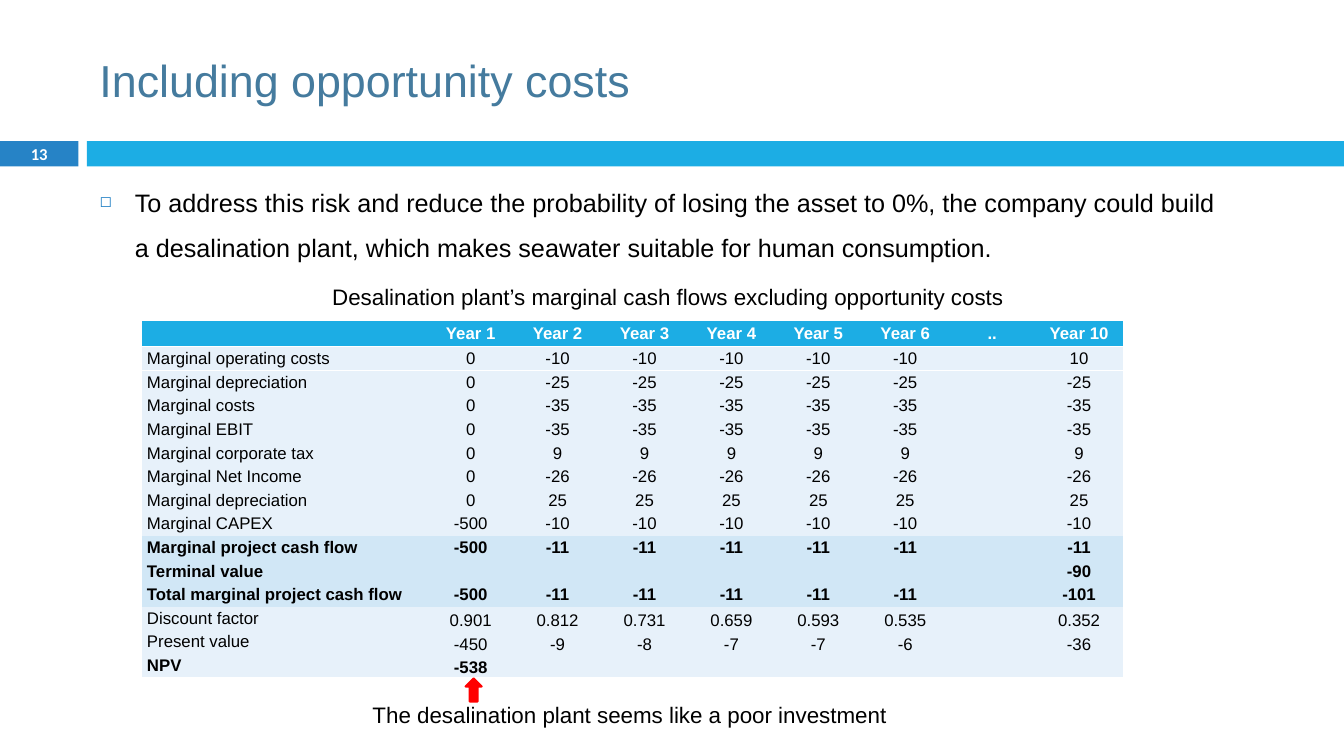
"""Build the slide on the desalination plant's marginal cash flows."""
import lxml.etree
import pptx
import pptx.dml.color
import pptx.enum.shapes
import pptx.enum.text
import pptx.oxml.ns
import pptx.util

Pt = pptx.util.Pt
Shape = pptx.enum.shapes.MSO_SHAPE
Align = pptx.enum.text.PP_ALIGN
Anchor = pptx.enum.text.MSO_ANCHOR
Fit = pptx.enum.text.MSO_AUTO_SIZE
qn = pptx.oxml.ns.qn

BLUE, DARK_BLUE, PALE, LIGHT = "1CADE4", "2683C6", "E7F1FA", "D1E7F6"
WHITE, BLACK, RED, STEEL = "FFFFFF", "000000", "FF0000", "457B9E"

TITLE = "Including opportunity costs"
PAGE_NUMBER = "13"
BODY = ("To address this risk and reduce the probability of losing the asset to 0%, "
        "the company could build a desalination plant, which makes seawater suitable "
        "for human consumption.")
CAPTION = "Desalination plant’s marginal cash flows excluding opportunity costs"
CONCLUSION = "The desalination plant seems like a poor investment"

HEADER = ["", "Year 1", "Year 2", "Year 3", "Year 4", "Year 5", "Year 6", "..", "Year 10"]
CASH_FLOWS = [
    ("Marginal operating costs", "0", ["-10"] * 5, "10"),
    ("Marginal depreciation", "0", ["-25"] * 5, "-25"),
    ("Marginal costs", "0", ["-35"] * 5, "-35"),
    ("Marginal EBIT", "0", ["-35"] * 5, "-35"),
    ("Marginal corporate tax", "0", ["9"] * 5, "9"),
    ("Marginal Net Income", "0", ["-26"] * 5, "-26"),
    ("Marginal depreciation", "0", ["25"] * 5, "25"),
    ("Marginal CAPEX", "-500", ["-10"] * 5, "-10"),
    ("Marginal project cash flow", "-500", ["-11"] * 5, "-11"),
    ("Terminal value", "", [""] * 5, "-90"),
    ("Total marginal project cash flow", "-500", ["-11"] * 5, "-101"),
    ("Discount factor", "0.901", ["0.812", "0.731", "0.659", "0.593", "0.535"], "0.352"),
    ("Present value", "-450", ["-9", "-8", "-7", "-7", "-6"], "-36"),
    ("NPV", "-538", [""] * 5, ""),
]
TOTAL_ROWS = range(9, 12)
DISCOUNT_ROWS = range(12, 15)
BOLD_ROWS = {0, 9, 10, 11, 14}

TABLE_LEFT, TABLE_TOP = 101.4, 229.1
LABEL_WIDTH, YEAR_WIDTH = 203.8, 62.1
HEADER_HEIGHT, ROW_HEIGHT = 18.7, 16.87
NO_STYLE = "{2D5ABB26-0587-4C30-8999-92F81FD0307C}"


def color(value):
    return pptx.dml.color.RGBColor.from_string(value)


def assign(target, values):
    for name, value in values.items():
        setattr(target, name, value)


def write(frame, text, size, fill, bold=False, font="Arial", **layout):
    para = frame.paragraphs[0]
    assign(para, layout)
    span = para.add_run()
    span.text = text
    assign(span.font, {"size": Pt(size), "name": font, "bold": bold})
    span.font.color.rgb = color(fill)
    return para


def add_text(page, place, text, size, fill, frame_format, **options):
    box = page.shapes.add_textbox(*map(Pt, place))
    assign(box.text_frame, {"word_wrap": True, **frame_format})
    return write(box.text_frame, text, size, fill, **options)


def add_block(page, kind, place, fill, line_width=None):
    block = page.shapes.add_shape(kind, *map(Pt, place))
    block.shadow.inherit = False
    block.fill.solid()
    block.fill.fore_color.rgb = color(fill)
    if line_width is None:
        block.line.fill.background()
    else:
        block.line.width = Pt(line_width)
        block.line.color.rgb = color(fill)


def add_bullet(para):
    settings = para._p.get_or_add_pPr()
    assign_indent = {"marL": Pt(25.2), "indent": -Pt(25.2)}
    for name, value in assign_indent.items():
        settings.set(name, str(int(value)))
    tint = lxml.etree.SubElement(settings, qn("a:buClr"))
    lxml.etree.SubElement(tint, qn("a:srgbClr"), val=DARK_BLUE)
    lxml.etree.SubElement(settings, qn("a:buSzPct"), val="60000")
    lxml.etree.SubElement(settings, qn("a:buChar"), char="◻")


def add_border(cell, side):
    line = lxml.etree.Element(qn(f"a:{side}"), w=str(int(Pt(1))))
    fill = lxml.etree.SubElement(line, qn("a:solidFill"))
    lxml.etree.SubElement(fill, qn("a:srgbClr"), val=WHITE)
    cell._tc.get_or_add_tcPr().insert(0, line)


def fill_cell(cell, text, row, column):
    lower = row in DISCOUNT_ROWS and column > 0
    assign(cell, {"margin_left": Pt(3.6), "margin_right": Pt(3.6),
                  "margin_top": 0, "margin_bottom": 0,
                  "vertical_anchor": Anchor.BOTTOM if lower else Anchor.MIDDLE})
    cell.fill.solid()
    cell.fill.fore_color.rgb = color(
        BLUE if row == 0 else LIGHT if row in TOTAL_ROWS else PALE)
    if row < 2:
        add_border(cell, "lnT" if row else "lnB")
    if text:
        write(cell.text_frame, text, 12, BLACK if row else WHITE, row in BOLD_ROWS,
              alignment=Align.CENTER if column else Align.LEFT,
              space_before=Pt(2), space_after=Pt(2))
    else:
        lxml.etree.SubElement(cell.text_frame.paragraphs[0]._p,
                              qn("a:endParaRPr"), sz="1200")


def add_cash_flow_table(page):
    rows = [HEADER] + [[label, first, *middle, "", last]
                       for label, first, middle, last in CASH_FLOWS]
    widths = [LABEL_WIDTH] + [YEAR_WIDTH] * (len(HEADER) - 1)
    heights = [HEADER_HEIGHT] + [ROW_HEIGHT] * len(CASH_FLOWS)
    place = (TABLE_LEFT, TABLE_TOP, sum(widths), sum(heights))
    table = page.shapes.add_table(len(rows), len(HEADER), *map(Pt, place)).table
    assign(table, {"first_row": False, "horz_banding": False})
    table._tbl.tblPr.find(qn("a:tableStyleId")).text = NO_STYLE
    for column, width in zip(table.columns, widths):
        column.width = Pt(width)
    for row, height in zip(table.rows, heights):
        row.height = Pt(height)
    for row, texts in enumerate(rows):
        for column, text in enumerate(texts):
            fill_cell(table.cell(row, column), text, row, column)


def main():
    deck = pptx.Presentation()
    assign(deck, {"slide_width": Pt(960), "slide_height": Pt(540)})
    page = deck.slides.add_slide(deck.slide_layouts[6])
    middle = {"vertical_anchor": Anchor.MIDDLE}
    caption = {"word_wrap": False, "auto_size": Fit.SHAPE_TO_FIT_TEXT}

    add_block(page, Shape.RECTANGLE, (0, 100.8, 56, 18), DARK_BLUE)
    add_block(page, Shape.RECTANGLE, (62, 100.8, 898, 18), BLUE)
    add_text(page, (64, 18, 856, 78), TITLE, 32, STEEL, middle)
    add_text(page, (0, 100.4, 56, 19.4), PAGE_NUMBER, 11.9, WHITE, middle,
             bold=True, font="Calibri", alignment=Align.CENTER)
    body = add_text(page, (64, 119.5, 818, 388), BODY, 18, BLACK, {},
                    line_spacing=1.5, space_before=Pt(7))
    add_bullet(body)
    add_cash_flow_table(page)
    add_text(page, (230.2, 198.9, 499.7, 26.6), CAPTION, 16, BLACK, caption)
    add_text(page, (259, 497.6, 385.9, 26.6), CONCLUSION, 16, BLACK, caption)
    add_block(page, Shape.UP_ARROW, (332.6, 484.6, 11.5, 16.5), RED, 1.5)
    deck.save("out.pptx")


if __name__ == "__main__":
    main()
